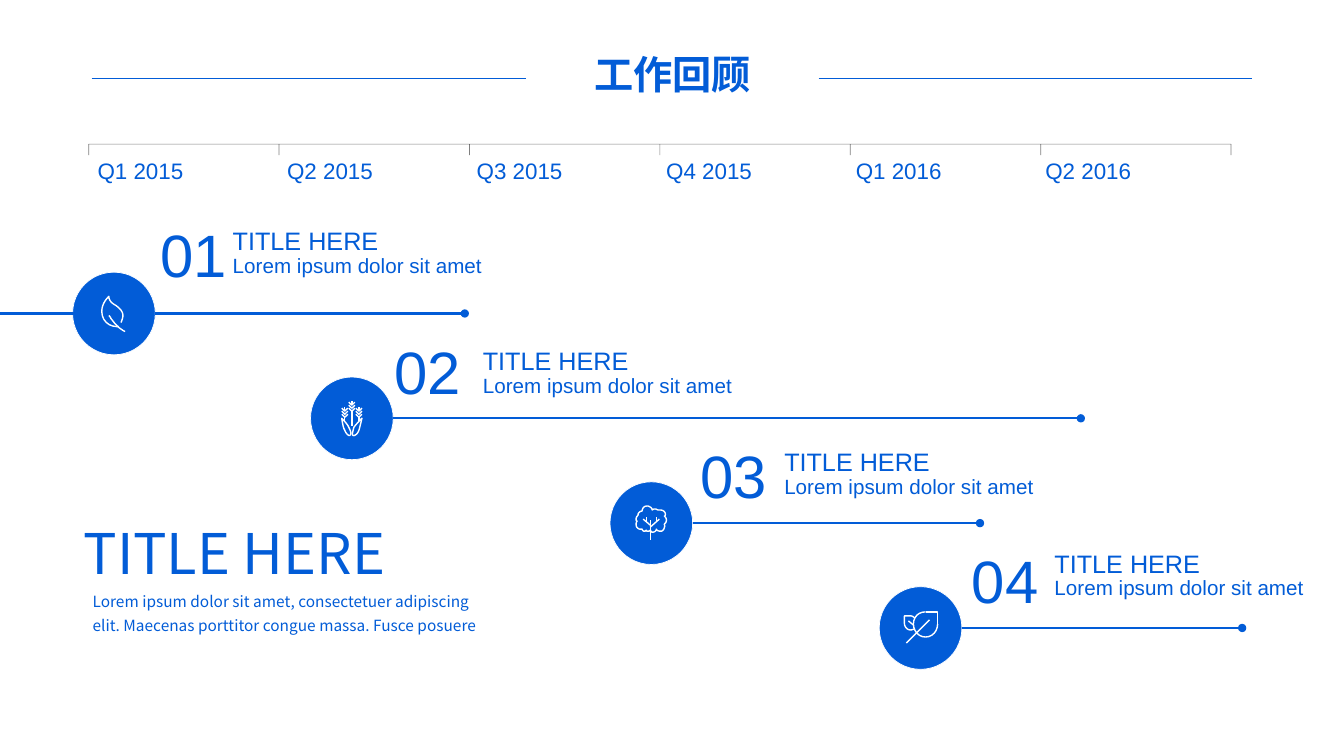
from pptx import Presentation
from pptx.dml.color import RGBColor
from pptx.enum.shapes import MSO_CONNECTOR, MSO_SHAPE
from pptx.enum.text import MSO_ANCHOR, PP_ALIGN
from pptx.oxml.ns import qn
from pptx.util import Inches, Pt
from lxml.etree import SubElement

BLUE, WHITE, BLACK = "025CD7", "FFFFFF", "000000"
LATIN, CHINESE = "Arial", "Noto Sans CJK SC"
HEADING = "工作回顾"
QUARTERS = ["Q1 2015", "Q2 2015", "Q3 2015", "Q4 2015", "Q1 2016", "Q2 2016"]
CAPTION = [("TITLE HERE", 18), ("Lorem ipsum dolor sit amet", 14.7)]
SUMMARY_TITLE = "TITLE HERE"
SUMMARY = ("Lorem ipsum dolor sit amet, consectetuer adipiscing elit. "
           "Maecenas porttitor congue massa. Fusce posuere")
DIAMETER = 0.82


def wheat_ear(x, y):
    chevrons = [[(x, y + step), (x + 3, y + step + 3), (x + 6, y + step)] for step in (1, 4, 7)]
    return [[(x + 3, y), (x + 3, y + 4)]] + chevrons


LEAF = {
    "at": (1.01, 2.94),
    "curves": [
        [(19, 26), (20, 24), (21, 21), (21, 19), (21, 15), (18, 12), (14, 9),
         (10, 7), (7, 4), (7, 0), (3, 4), (0, 9), (0, 15), (0, 24), (7, 30), (15, 30), (17, 30), (17, 30), (17, 30)],
        [(23, 35), (22, 34), (21, 34), (20, 33), (18, 32), (16, 30), (14, 28),
         (12, 26), (11, 24), (9, 22), (9, 21), (8, 20), (7, 19)],
    ],
    "lines": [],
}
WHEAT = {
    "at": (3.39, 3.98),
    "curves": [
        [(3, 29), (4, 32), (7, 35), (8, 34), (10, 33), (9, 30), (7, 26),
         (6, 23), (0, 17), (0, 17), (0, 17), (1, 26), (3, 29)],
        [(17, 29), (18, 26), (20, 17), (20, 17), (20, 17), (14, 23), (12, 26),
         (11, 30), (10, 33), (11, 34), (13, 35), (16, 32), (17, 29)],
    ],
    "lines": wheat_ear(0, 6) + wheat_ear(7, 0) + wheat_ear(14, 6)
    + [[(3, 20), (3, 16)], [(10, 10), (10, 25)], [(17, 16), (17, 20)]],
}
TREE = {
    "at": (6.31, 5.02),
    "curves": [
        [(30, 14), (30, 12), (29, 11), (28, 10), (29, 10), (29, 9), (29, 8), (29, 6), (27, 4), (24, 4),
         (24, 4), (23, 4), (22, 4), (21, 4), (20, 3), (19, 3), (18, 3), (17, 3), (16, 4),
         (16, 2), (13, 0), (11, 0), (8, 0), (6, 2), (6, 5), (4, 5), (2, 7), (2, 8),
         (2, 9), (2, 9), (2, 9), (1, 10), (0, 11), (0, 13), (0, 14), (0, 15), (1, 15),
         (0, 16), (0, 17), (0, 19), (0, 21), (2, 23), (4, 23), (5, 23), (6, 23), (6, 23),
         (6, 24), (7, 25), (8, 25), (9, 25), (9, 25), (10, 24), (10, 25), (11, 25), (12, 25),
         (13, 25), (13, 25), (14, 24), (15, 25), (15, 26), (16, 26), (18, 26), (20, 25), (20, 23),
         (21, 25), (23, 25), (25, 25), (26, 25), (28, 23), (28, 21), (29, 20), (28, 19), (28, 18),
         (29, 17), (30, 16), (30, 14)],
    ],
    "lines": [[(14, 14), (14, 34)], [(23, 13), (14, 21)], [(14, 19), (7, 13)],
              [(10, 11), (10, 16)], [(20, 11), (20, 15)]],
}
TWIN_LEAVES = {
    "at": (8.97, 6.07),
    "curves": [
        [(33, 12), (33, 19), (28, 25), (21, 25), (14, 25), (9, 19), (9, 12), (9, 5), (14, 0), (21, 0)],
        [(10, 6), (9, 5), (8, 4), (6, 4), (4, 4), (2, 4), (0, 4), (0, 6), (0, 9), (0, 11),
         (0, 15), (3, 18), (6, 18), (8, 18), (9, 17), (10, 17)],
    ],
    "lines": [[(21, 0), (33, 0), (33, 12)], [(2, 31), (25, 8)], [(4, 9), (9, 13)]],
}
MILESTONES = [
    ("01", 0.72, 4.61, (1.49, 2.11), (2.21, 2.23), LEAF),
    ("02", 3.08, 10.72, (3.81, 3.27), (4.69, 3.42), WHEAT),
    ("03", 6.05, 9.72, (6.85, 4.3), (7.68, 4.42), TREE),
    ("04", 8.72, 12.32, (9.54, 5.34), (10.36, 5.43), TWIN_LEAVES),
]

presentation = Presentation()
presentation.slide_width, presentation.slide_height = Inches(13.33), Inches(7.5)
slide = presentation.slides.add_slide(presentation.slide_layouts[6])


def paint(color_format, color):
    color_format.rgb = RGBColor.from_string(color)


def add_line(start, end, color, width, oval_end=False, opacity=None):
    points = [Inches(value) for value in (*start, *end)]
    line = slide.shapes.add_connector(MSO_CONNECTOR.STRAIGHT, *points)
    paint(line.line.color, color)
    line.line.width = Pt(width)
    properties = line._element.spPr
    SubElement(properties, qn("a:effectLst"))
    outline = properties.find(qn("a:ln"))
    if opacity:
        SubElement(outline.find(".//" + qn("a:srgbClr")), qn("a:alpha"), val=str(opacity * 1000))
    if oval_end:
        SubElement(outline, qn("a:tailEnd"), type="oval")


def add_text(box, lines, font=LATIN, spacing=None, align=None, bold=None, wrap=True, anchor=MSO_ANCHOR.TOP):
    frame = slide.shapes.add_textbox(*[Inches(value) for value in box]).text_frame
    frame.word_wrap = wrap
    frame.vertical_anchor = anchor
    frame.text = "\n".join(text for text, size in lines)
    for paragraph, (text, size) in zip(frame.paragraphs, lines):
        paragraph.font.size = Pt(size)
        paragraph.font.name = font
        paragraph.font.bold = bold
        paint(paragraph.font.color, BLUE)
        SubElement(paragraph._p.pPr.find(qn("a:defRPr")), qn("a:ea"), typeface=font)
        paragraph.alignment = align
        paragraph.line_spacing = spacing


def flatten(nodes, steps=6):
    points = [nodes[0]]
    for first in range(0, len(nodes) - 1, 3):
        controls = nodes[first:first + 4]
        for step in range(1, steps + 1):
            t = step / steps
            weights = ((1 - t) ** 3, 3 * t * (1 - t) ** 2, 3 * t * t * (1 - t), t ** 3)
            points.append(tuple(sum(w * node[axis] for w, node in zip(weights, controls)) for axis in (0, 1)))
    return points


def add_icon(icon):
    left, top = icon["at"]
    strokes = [flatten(curve) for curve in icon["curves"]] + icon["lines"]
    strokes = [[(Inches(left + x / 100), Inches(top + y / 100)) for x, y in stroke] for stroke in strokes]
    builder = slide.shapes.build_freeform(*strokes[0][0])
    for index, stroke in enumerate(strokes):
        if index:
            builder.move_to(*stroke[0])
        builder.add_line_segments(stroke[1:], close=False)
    shape = builder.convert_to_shape()
    shape.shadow.inherit = False
    shape.fill.background()
    paint(shape.line.color, WHITE)
    shape.line.width = Pt(1)


def add_circle(left, top):
    circle = slide.shapes.add_shape(MSO_SHAPE.OVAL, Inches(left), Inches(top), Inches(DIAMETER), Inches(DIAMETER))
    circle.shadow.inherit = False
    circle.fill.solid()
    paint(circle.fill.fore_color, BLUE)
    paint(circle.line.color, WHITE)
    circle.line.width = Pt(0.5)


for left, right in ((0.91, 5.22), (8.12, 12.42)):
    add_line((left, 0.78), (right, 0.78), BLUE, 0.5)
add_text((5.24, 0.45, 2.86, 0.57), [(HEADING, 28)], CHINESE, align=PP_ALIGN.CENTER, bold=True,
         anchor=MSO_ANCHOR.MIDDLE)

axis_left, axis_right, axis_top = 0.88, 12.21, 1.43
add_line((axis_left, axis_top), (axis_right, axis_top), BLACK, 0.5, opacity=50)
for index in range(len(QUARTERS) + 1):
    x = axis_left + index * (axis_right - axis_left) / len(QUARTERS)
    add_line((x, axis_top), (x, axis_top + 0.11), BLACK, 0.5, opacity=50)
for index, quarter in enumerate(QUARTERS):
    add_text((0.87 + 1.88 * index, 1.51, 1.33, 0.37), [(quarter, 16)])

for index, (number, left, end, number_at, caption_at, icon) in enumerate(MILESTONES):
    top = 2.7 + 1.04 * index
    middle = top + DIAMETER / 2
    add_circle(left, top)
    if index == 0:
        add_line((0, middle), (1.01, middle), BLUE, 1.5)
    add_line((left + DIAMETER, middle), (end, middle), BLUE, 1.5, oval_end=True)
    add_text((*number_at, 0.89, 0.82), [(number, 42.7)], wrap=False)
    add_text((*caption_at, 2.69, 0.58), CAPTION, spacing=0.87)
    add_icon(icon)

add_text((0.73, 5.09, 3.81, 0.77), [(SUMMARY_TITLE, 40)], CHINESE)
add_text((0.82, 5.77, 4.09, 0.8), [(SUMMARY, 11)], CHINESE, spacing=1.3)
presentation.save("out.pptx")
